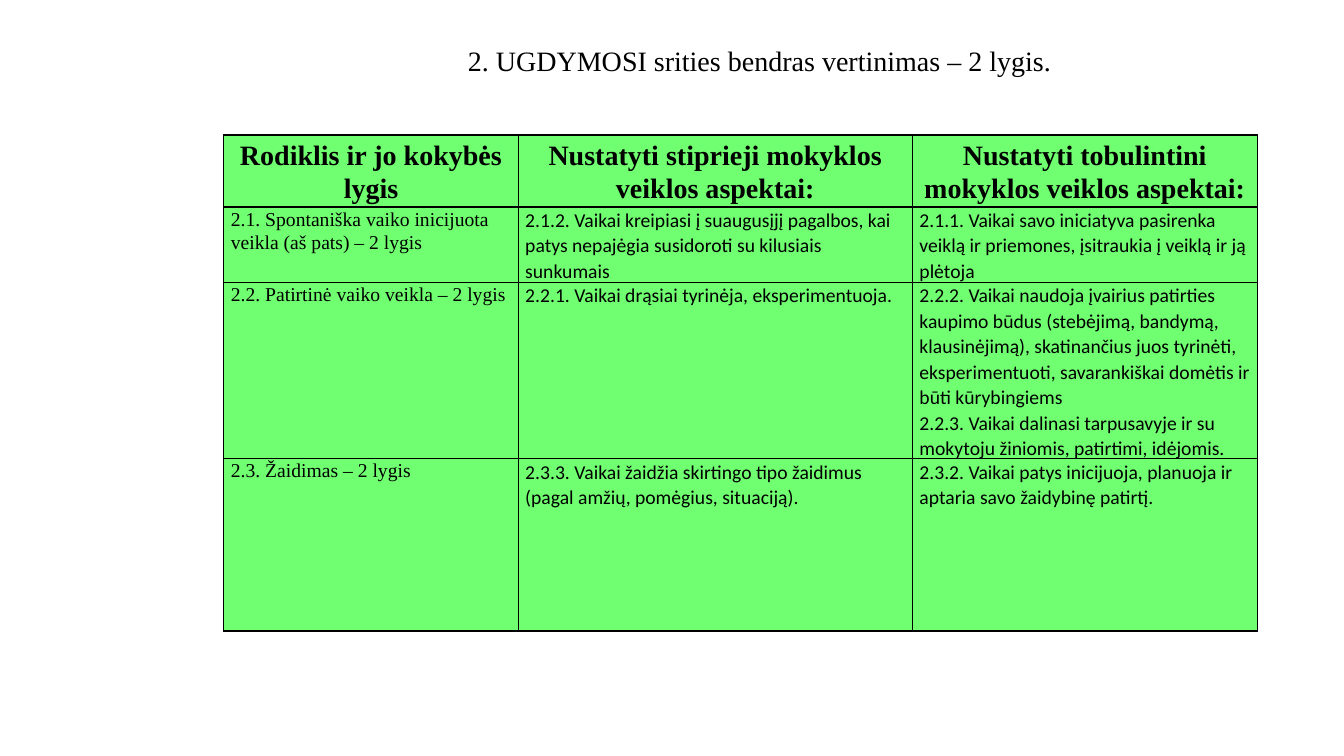
from lxml import etree
from pptx import Presentation
from pptx.dml.color import RGBColor
from pptx.enum import text
from pptx.oxml import ns
from pptx.util import Inches, Pt

TITLE = "2. UGDYMOSI srities bendras vertinimas – 2 lygis."
HEAD = [
    "Rodiklis ir jo kokybės lygis",
    "Nustatyti stiprieji mokyklos veiklos aspektai:",
    "Nustatyti tobulintini mokyklos veiklos aspektai:",
]
BODY = [
    [
        "2.1. Spontaniška vaiko inicijuota veikla (aš pats) – 2 lygis",
        "2.1.2. Vaikai kreipiasi į suaugusįjį pagalbos, kai patys nepajėgia "
        "susidoroti su kilusiais sunkumais",
        "2.1.1. Vaikai savo iniciatyva pasirenka veiklą ir priemones, "
        "įsitraukia į veiklą ir ją plėtoja",
    ],
    [
        "2.2. Patirtinė vaiko veikla – 2 lygis",
        "2.2.1. Vaikai drąsiai tyrinėja, eksperimentuoja.",
        "2.2.2. Vaikai naudoja įvairius patirties kaupimo būdus (stebėjimą, "
        "bandymą, klausinėjimą), skatinančius juos tyrinėti, "
        "eksperimentuoti, savarankiškai domėtis ir būti kūrybingiems\n"
        "2.2.3. Vaikai dalinasi tarpusavyje ir su mokytoju žiniomis, "
        "patirtimi, idėjomis.",
    ],
    [
        "2.3. Žaidimas – 2 lygis",
        "2.3.3. Vaikai žaidžia skirtingo tipo žaidimus\n"
        "(pagal amžių, pomėgius, situaciją).",
        "2.3.2. Vaikai patys inicijuoja, planuoja ir aptaria savo "
        "žaidybinę patirtį.",
    ],
]
WIDTHS = [2.92, 3.91, 3.42]
HEIGHTS = [0.35, 0.72, 1.69, 1.71]
COLORS = {"ink": "000000", "green": "70FF70"}
SERIF, SANS = "Times New Roman", "Calibri"
LEFT, CENTER = text.PP_ALIGN.LEFT, text.PP_ALIGN.CENTER


def style(frame, font, size, bold, align, gap=None):
    for para in frame.paragraphs:
        para.alignment = align
        if gap:
            para.line_spacing = gap
        for run in para.runs:
            run.font.name = font
            run.font.size = Pt(size)
            run.font.bold = bold
            run.font.color.rgb = RGBColor.from_string(COLORS["ink"])


def border(cell):
    """Put a thin line on each side; lines must precede the fill."""
    props = cell._tc.get_or_add_tcPr()
    for i, side in enumerate("LRTB"):
        line = etree.Element(ns.qn(f"a:ln{side}"), w=str(Pt(1)))
        fill = etree.SubElement(line, ns.qn("a:solidFill"))
        etree.SubElement(fill, ns.qn("a:srgbClr"), val=COLORS["ink"])
        props.insert(i, line)


def add_title(slide):
    box = slide.shapes.add_textbox(
        Inches(2.41), Inches(0.33), Inches(10.25), Inches(0.8))
    frame = box.text_frame
    frame.word_wrap = True
    frame.margin_top = Inches(0.1)
    frame.text = TITLE
    style(frame, SERIF, 20, False, CENTER)


def add_grid(slide):
    rows = [HEAD, *BODY]
    table = slide.shapes.add_table(
        len(rows), len(HEAD), Inches(2.22), Inches(1.34),
        Inches(sum(WIDTHS)), Inches(sum(HEIGHTS))).table
    table.horz_banding = False
    for col, width in zip(table.columns, WIDTHS):
        col.width = Inches(width)
    for row, height in zip(table.rows, HEIGHTS):
        row.height = Inches(height)
    for r, row in enumerate(rows):
        for c, words in enumerate(row):
            cell = table.cell(r, c)
            cell.margin_left = cell.margin_right = Inches(0.07)
            cell.margin_top = cell.margin_bottom = 0
            cell.fill.solid()
            cell.fill.fore_color.rgb = RGBColor.from_string(COLORS["green"])
            border(cell)
            cell.text_frame.text = words
            if r == 0:
                cell.vertical_anchor = text.MSO_ANCHOR.MIDDLE
                style(cell.text_frame, SERIF, 20, True, CENTER, 1.07)
            else:
                font = SANS if c else SERIF
                style(cell.text_frame, font, 14, False, LEFT, 1.07)


def main():
    deck = Presentation()
    deck.slide_width, deck.slide_height = Inches(13.33), Inches(7.5)
    slide = deck.slides.add_slide(deck.slide_layouts[6])
    add_title(slide)
    add_grid(slide)
    deck.save("out.pptx")


if __name__ == "__main__":
    main()
